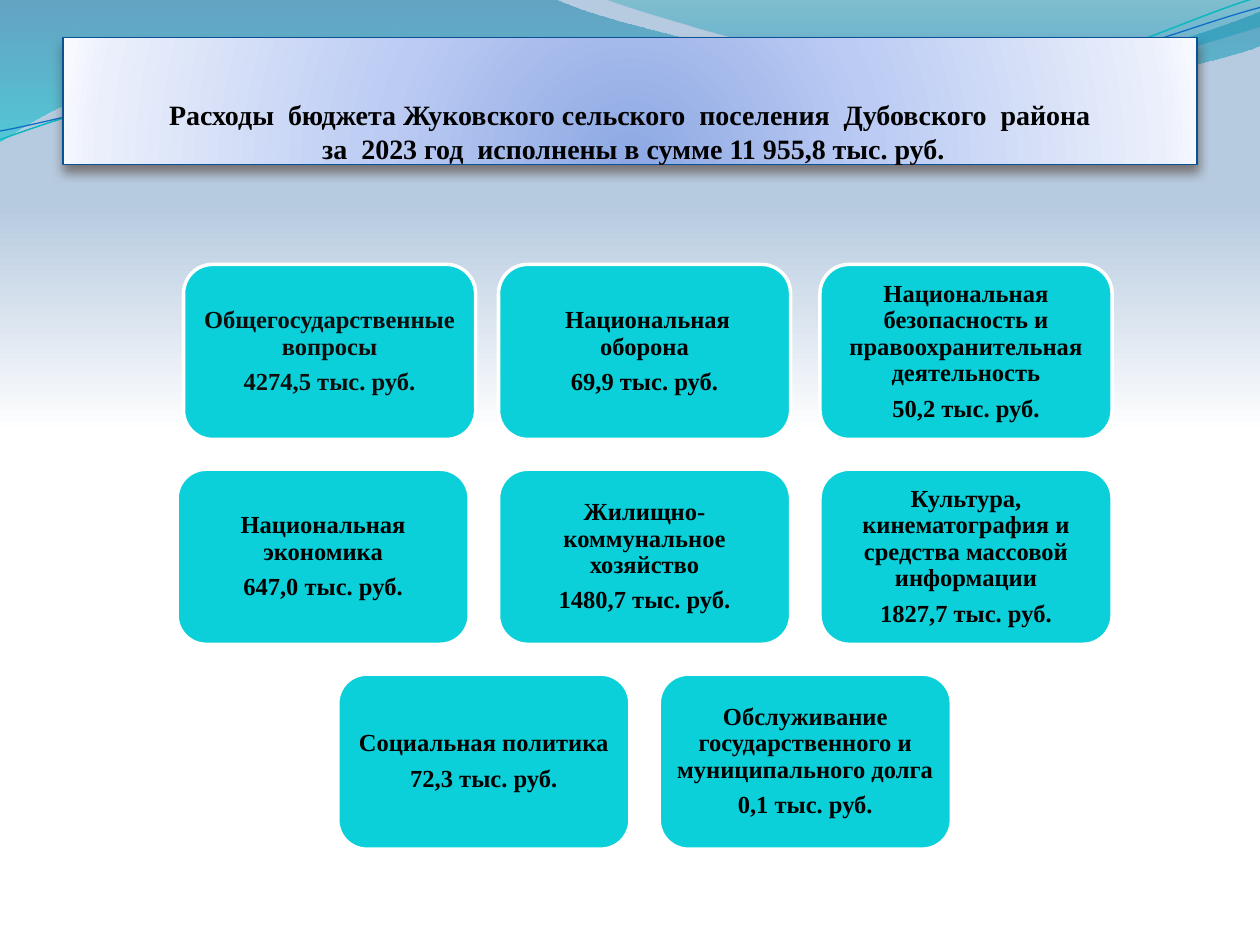
from lxml import etree
from pptx import Presentation
from pptx import util as u
from pptx.dml.color import RGBColor
from pptx.enum import shapes, text
from pptx.oxml import parse_xml
from pptx.oxml.ns import nsdecls, qn

FONT = "Times New Roman"
COLORS = {
    "sky": "B7CBE0", "white": "FFFFFF", "black": "000000", "soft_black": "0D0D0D",
    "box": "0BD0D9", "title_line": "095295", "shadow": "4E3B30",
    "teal_line": "0AB8BF", "blue_line": "0F6FC6",
}
DOWNWARD = '<a:lin ang="5400000" scaled="0"/>'
FROM_BOTTOM = ('<a:path path="circle">'
               '<a:fillToRect l="50000" t="130000" r="50000" b="-30000"/></a:path>')

# Gradient stops: position %, colour, opacity %
SKY_STOPS = [(0, COLORS["sky"], 100), (22, COLORS["sky"], 100), (46, COLORS["white"], 100)]
TITLE_STOPS = [(0, "8DA8E3", 100), (43, "BBCBF3", 100), (93, "EAEFFB", 100), (100, "F7F9FF", 100)]

# Waves in inches: a start, then straight (1 point) or Bezier (3 points) pieces
LEFT_WAVE = [
    (0, 0), [(4.4, -0.01)],
    [(4.76, 0.17), (6.64, 0.63), (7.58, 0.63)], [(8.53, 0.63), (9.58, 0.26), (10, 0.09)],
    [(10.01, 0.36)],
    [(9.83, 0.44), (8.7, 0.76), (7.46, 0.75)], [(6.22, 0.75), (3.82, 0.28), (2.57, 0.34)],
    [(1.29, 0.36), (0.46, 0.83), (-0.01, 1.13)], [(0, 0)],
]
RIGHT_WAVE = [
    (4.79, -0.01), [(5.09, 0.11), (6.82, 0.62), (7.69, 0.65)],
    [(8.56, 0.69), (9.61, 0.32), (10, 0.21)], [(10, 0)], [(4.79, -0.01)],
]
TEAL_CURVE = [
    (0, 1.11), [(0.48, 0.93), (1.58, 0.57), (2.77, 0.52)],
    [(3.95, 0.47), (5.93, 0.89), (7.13, 0.8)], [(8.33, 0.71), (9.38, 0.15), (9.98, -0.02)],
]
BLUE_CURVE = [
    (0, 1.04), [(0.47, 0.96), (1.64, 0.61), (2.83, 0.56)],
    [(4.03, 0.51), (5.97, 0.84), (7.17, 0.75)], [(8.36, 0.67), (9.41, 0.21), (10, 0.06)],
]

TITLE = ("Расходы  бюджета Жуковского сельского  поселения  Дубовского  района\v"
         " за  2023 год  исполнены в сумме 11 955,8 тыс. руб.")
EXPENSES = [
    [("Общегосударственные вопросы", "4274,5"),
     (" Национальная оборона", "69,9"),
     ("Национальная безопасность и правоохранительная деятельность", "50,2")],
    [("Национальная экономика", "647,0"),
     ("Жилищно-коммунальное хозяйство", "1480,7"),
     ("Культура, кинематография и средства массовой информации", "1827,7")],
    [("Социальная политика", "72,3"),
     ("Обслуживание государственного и муниципального долга", "0,1")],
]
# Grid of boxes, cm
GRID_LEFT, GRID_TOP = 3.57, 5.33
STEP_X, STEP_Y = 6.48, 4.13
BOX_W, BOX_H = 5.89, 3.53


def rgb(name):
    return RGBColor.from_string(COLORS[name])


def set_gradient(fill, element, stops, direction):
    fill.gradient()
    default = next(element.iter(qn("a:gradFill")))
    stop_xml = "".join(
        f'<a:gs pos="{pos * 1000}"><a:srgbClr val="{color}">'
        f'<a:alpha val="{opacity * 1000}"/></a:srgbClr></a:gs>'
        for pos, color, opacity in stops)
    default.getparent().replace(default, parse_xml(
        f'<a:gradFill {nsdecls("a")} rotWithShape="1"><a:gsLst>{stop_xml}</a:gsLst>'
        f'{direction}</a:gradFill>'))


def set_line(shape, color, width):
    shape.line.color.rgb = rgb(color)
    shape.line.width = u.Pt(width)


def add_curve(slide, pieces, close):
    start, *rest = [(u.Cm(x * 2.54), u.Cm(y * 2.54))
                    for piece in [[pieces[0]], *pieces[1:]] for x, y in piece]
    builder = slide.shapes.build_freeform(*start)
    builder.add_line_segments(rest, close=close)
    curve = builder.convert_to_shape()
    curve.shadow.inherit = False

    # Three-point pieces become Bezier segments
    segments = iter(list(curve.element.iter(qn("a:lnTo"))))
    for piece in pieces[1:]:
        group = [next(segments) for _ in piece]
        if len(group) == 3:
            bezier = etree.Element(qn("a:cubicBezTo"))
            group[0].addprevious(bezier)
            for segment in group:
                bezier.append(segment[0])
                segment.getparent().remove(segment)
    return curve


def add_wave(slide, pieces, stops):
    wave = add_curve(slide, pieces, True)
    set_gradient(wave.fill, wave.element, stops, DOWNWARD)
    wave.line.fill.background()
    return wave


def add_wave_line(slide, pieces, color, width):
    curve = add_curve(slide, pieces, False)
    curve.fill.background()
    set_line(curve, color, width)
    return curve


def move_to_master(master, decorations):
    for position, decoration in enumerate(decorations, start=2):
        master.shapes.element.insert(position, decoration.element)


def format_text(frame, size, color, anchor, margins):
    frame.word_wrap = True
    frame.auto_size = text.MSO_AUTO_SIZE.NONE
    frame.vertical_anchor = anchor
    (frame.margin_left, frame.margin_top,
     frame.margin_right, frame.margin_bottom) = map(u.Cm, margins)
    for paragraph in frame.paragraphs:
        paragraph.alignment = text.PP_ALIGN.CENTER
        for run in paragraph.runs:
            run.font.name, run.font.size, run.font.bold = FONT, u.Pt(size), True
            run.font.color.rgb = rgb(color)


def format_title(title):
    title.left, title.top, title.width, title.height = map(u.Cm, (1.27, 0.76, 22.86, 2.56))
    title.text_frame.text = TITLE
    format_text(title.text_frame, 16, "black", text.MSO_ANCHOR.BOTTOM, (0, 0.13, 0, 0))
    set_gradient(title.fill, title.element, TITLE_STOPS, FROM_BOTTOM)
    set_line(title, "title_line", 0.75)
    title.shadow.inherit = False
    effects = next(title.element.iter(qn("a:effectLst")))
    shadow = etree.SubElement(effects, qn("a:outerShdw"), blurRad=str(u.Pt(6)),
                              dist=str(u.Pt(4)), dir="5400000", rotWithShape="0")
    color = etree.SubElement(shadow, qn("a:srgbClr"), val=COLORS["shadow"])
    etree.SubElement(color, qn("a:alpha"), val="60000")


def add_expense(slide, left, top, name, amount, color):
    box = slide.shapes.add_shape(shapes.MSO_SHAPE.FLOWCHART_ALTERNATE_PROCESS,
                                 u.Cm(left), u.Cm(top), u.Cm(BOX_W), u.Cm(BOX_H))
    box.shadow.inherit = False
    box.fill.solid()
    box.fill.fore_color.rgb = rgb("box")
    set_line(box, "white", 2)
    box.text_frame.text = f"{name}\n{amount} тыс. руб."
    format_text(box.text_frame, 14, color, text.MSO_ANCHOR.MIDDLE, [0.15] * 4)
    for paragraph in box.text_frame.paragraphs:
        paragraph.line_spacing = 0.9
        paragraph.space_after = u.Pt(5)


def main():
    prs = Presentation()
    prs.slide_width, prs.slide_height = u.Cm(25.4), u.Cm(19.05)
    slide = prs.slides.add_slide(prs.slide_layouts[5])

    # Background, with the waves on the master
    set_gradient(slide.background.fill, slide.element, SKY_STOPS, DOWNWARD)
    move_to_master(prs.slide_master, [
        add_wave(slide, LEFT_WAVE, [(0, "0074A1", 45), (100, "00C6CF", 55)]),
        add_wave(slide, RIGHT_WAVE, [(0, "00A1A9", 30), (80, "008BBF", 45)]),
        add_wave_line(slide, TEAL_CURVE, "teal_line", 0.85),
        add_wave_line(slide, BLUE_CURVE, "blue_line", 0.75),
    ])

    format_title(slide.shapes.title)

    # Expense boxes: short rows are centred, the first box sits slightly to the right
    for row, expenses in enumerate(EXPENSES):
        row_left = GRID_LEFT + (3 - len(expenses)) * STEP_X / 2
        for col, (name, amount) in enumerate(expenses):
            first = row == col == 0
            add_expense(slide, row_left + col * STEP_X + (0.13 if first else 0),
                        GRID_TOP + row * STEP_Y, name, amount,
                        "soft_black" if first else "black")

    prs.save("out.pptx")


if __name__ == "__main__":
    main()
